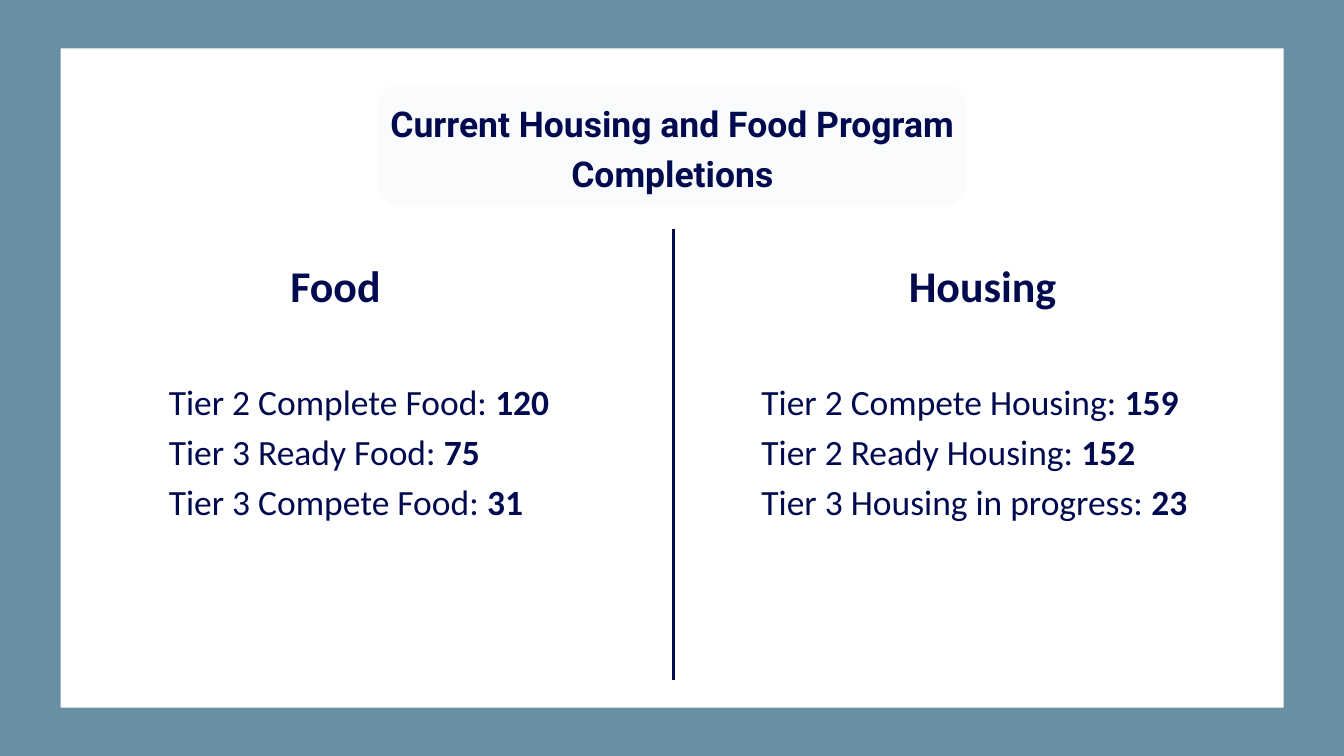
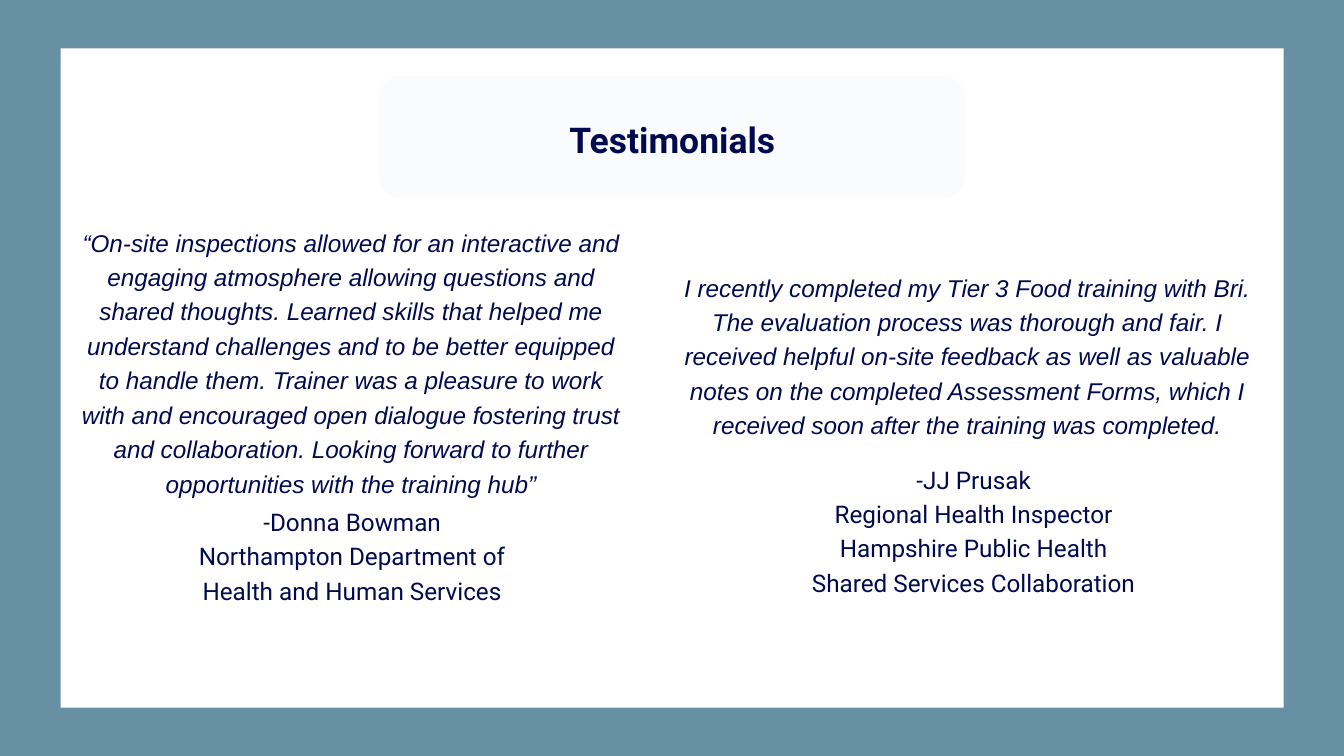
from lxml.etree import SubElement
from pptx import Presentation
from pptx.dml.color import RGBColor
from pptx.enum.shapes import MSO_CONNECTOR, MSO_SHAPE
from pptx.enum.text import MSO_ANCHOR, MSO_AUTO_SIZE, PP_ALIGN
from pptx.oxml.ns import qn
from pptx.util import Cm, Pt

COLORS = {"frame": "6890A4", "panel": "FFFFFF", "band": "B3C8E1", "ink": "010A4F"}
FRAME_FORMAT = {
    "margin_left": 0, "margin_top": 0, "margin_right": 0, "margin_bottom": 0,
    "word_wrap": True, "auto_size": MSO_AUTO_SIZE.NONE,
    "vertical_anchor": MSO_ANCHOR.TOP,
}
STYLES = {
    "title": ({"name": "Roboto", "size": Pt(38), "bold": True, "italic": False}, PP_ALIGN.CENTER, 54),
    "heading": ({"name": "Calibri", "size": Pt(47), "bold": True, "italic": False}, PP_ALIGN.CENTER, 66.7),
    "list": ({"name": "Calibri", "size": Pt(38), "bold": False, "italic": False}, PP_ALIGN.LEFT, 53.9),
    "quote": ({"name": "Arial", "size": Pt(26), "bold": False, "italic": True}, PP_ALIGN.CENTER, 36.9),
    "author": ({"name": "Roboto", "size": Pt(26), "bold": False, "italic": False}, PP_ALIGN.CENTER, 36.9),
}
SLIDES = [
    {
        "band_top": 3.18,
        "title": ("Current Housing and Food Program Completions", (14, 3.56, 22.83, 3.68)),
        "divider": True,
        "blocks": [
            ("heading", (10.8, 9.42, 3.76, 2.26), [("Food",)]),
            ("list", (6.38, 14.07, 15.19, 7.44), [
                ("Tier 2 Complete Food: ", "120"),
                ("Tier 3 Ready Food:", " 75"),
                ("Tier 3 Compete Food: ", "31"),
            ]),
            ("heading", (34.04, 9.42, 6.2, 2.26), [("Housing",)]),
            ("list", (28.78, 14.07, 16.74, 5.56), [
                ("Tier 2 Compete Housing: ", "159"),
                ("Tier 2 Ready Housing: ", "152"),
                ("Tier 3 Housing in progress: ", "23"),
            ]),
        ],
    },
    {
        "band_top": 2.87,
        "title": ("Testimonials", (14, 4.17, 22.83, 1.8)),
        "divider": False,
        "blocks": [
            ("quote", (2.84, 8.41, 20.88, 11.63), [(
                "“On-site inspections allowed for an interactive and engaging atmosphere "
                "allowing questions and shared thoughts. Learned skills that helped me "
                "understand challenges and to be better equipped to handle them. Trainer was "
                "a pleasure to work with and encouraged open dialogue fostering trust and "
                "collaboration. Looking forward to further opportunities with the training hub”",
            )]),
            ("author", (6.71, 18.97, 13.21, 3.84), [
                ("-Donna Bowman",),
                ("Northampton Department of Health and Human Services",),
            ]),
            ("quote", (25.4, 10.11, 22.35, 6.45), [(
                "I recently completed my Tier 3 Food training with Bri. The evaluation process "
                "was thorough and fair. I received helpful on-site feedback as well as valuable "
                "notes on the completed Assessment Forms, which I received soon after the "
                "training was completed.",
            )]),
            ("author", (30.2, 17.37, 13.21, 5.13), [
                ("-JJ Prusak",),
                ("Regional Health Inspector",),
                ("Hampshire Public Health Shared Services Collaboration",),
            ]),
        ],
    },
]


def add_plate(page, kind, place, color):
    plate = page.shapes.add_shape(kind, *map(Cm, place))
    plate.shadow.inherit = False
    plate.fill.solid()
    plate.fill.fore_color.rgb = RGBColor.from_string(COLORS[color])
    plate.line.fill.background()
    return plate


def write_block(box, style, place, lines):
    box.left, box.top, box.width, box.height = map(Cm, place)
    for key, value in FRAME_FORMAT.items():
        setattr(box.text_frame, key, value)
    font_format, alignment, spacing = STYLES[style]
    paragraph_format = {
        "alignment": alignment, "line_spacing": Pt(spacing),
        "space_before": Pt(0), "space_after": Pt(0),
    }
    for row, line in enumerate(lines):
        para = box.text_frame.add_paragraph() if row else box.text_frame.paragraphs[0]
        for key, value in paragraph_format.items():
            setattr(para, key, value)
        properties = para._p.get_or_add_pPr()
        properties.set("marL", "0")
        properties.set("indent", "0")
        SubElement(properties, qn("a:buNone"))
        for position, text in enumerate(line):
            span = para.add_run()
            span.text = text
            for key, value in font_format.items():
                setattr(span.font, key, value)
            span.font.color.rgb = RGBColor.from_string(COLORS["ink"])
            if position:
                span.font.bold = True


deck = Presentation()
deck.slide_width, deck.slide_height = Cm(50.8), Cm(28.58)
background = deck.slide_master.background.fill
background.solid()
background.fore_color.rgb = RGBColor.from_string(COLORS["frame"])
layout = deck.slide_layouts.get_by_name("Comparison")

for number, content in enumerate(SLIDES):
    page = deck.slides.add_slide(layout)
    if number == 0:
        panel = add_plate(page, MSO_SHAPE.RECTANGLE, (2.29, 1.83, 46.23, 24.92), "panel")
        layout.shapes[0].element.addprevious(panel.element)

    band = add_plate(page, MSO_SHAPE.ROUNDED_RECTANGLE, (14.3, content["band_top"], 22.2, 4.62), "band")
    band.adjustments[0] = 0.19
    tint = band.element.spPr.find(qn("a:solidFill"))[0]
    SubElement(tint, qn("a:alpha"), val="7000")
    page.shapes.title.element.addprevious(band.element)

    title, title_place = content["title"]
    write_block(page.shapes.title, "title", title_place, [(title,)])
    for index, (style, place, lines) in enumerate(content["blocks"], start=1):
        write_block(page.placeholders[index], style, place, lines)

    if content["divider"]:
        divider = page.shapes.add_connector(
            MSO_CONNECTOR.STRAIGHT, Cm(25.45), Cm(8.66), Cm(25.45), Cm(25.7))
        divider.line.width = Pt(3)
        divider.line.color.rgb = RGBColor.from_string(COLORS["ink"])
        SubElement(divider.element.spPr, qn("a:effectLst"))

deck.save("out.pptx")
